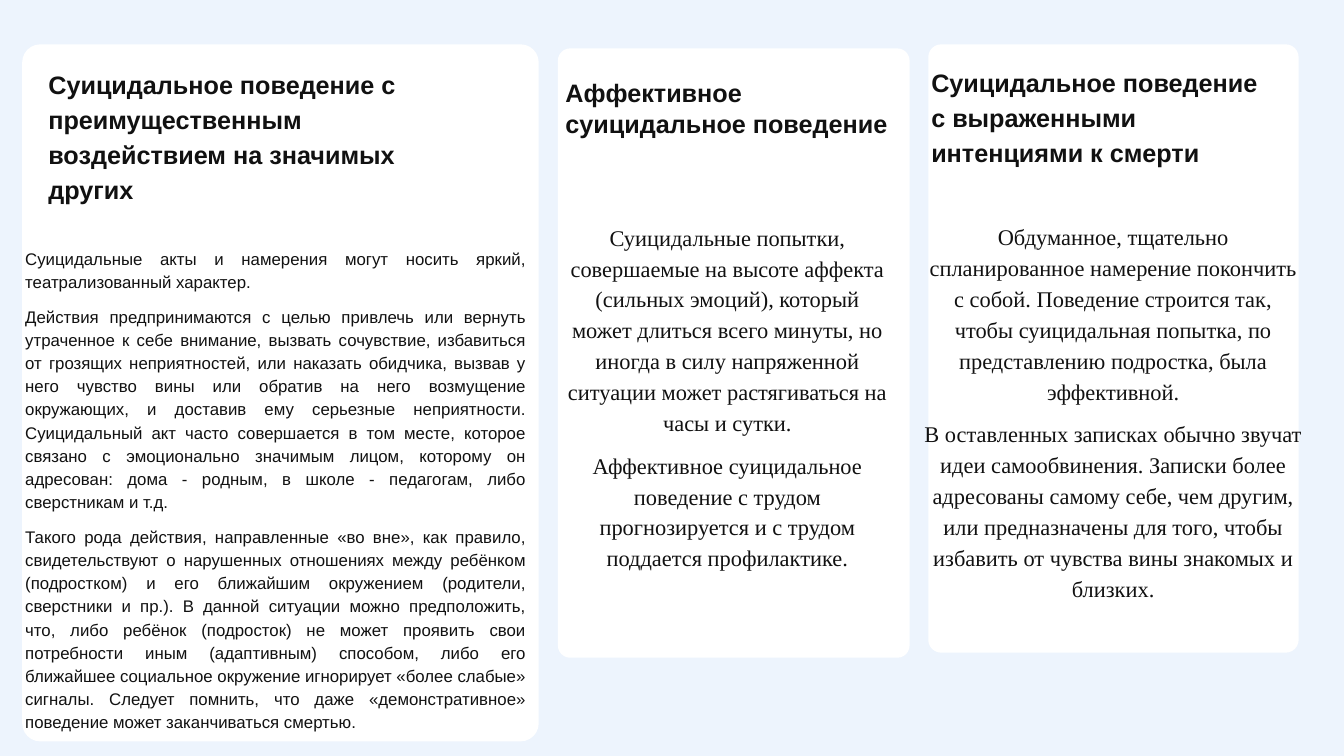
import pptx
import pptx.dml.color
import pptx.enum.shapes
import pptx.enum.text
import pptx.util
from pptx.util import Inches

BACKGROUND = pptx.dml.color.RGBColor(0xED, 0xF4, 0xFD)
CARD_FILL = pptx.dml.color.RGBColor(0xFF, 0xFF, 0xFF)
INK = pptx.dml.color.RGBColor(0x11, 0x11, 0x11)

ALIGN = pptx.enum.text.PP_ALIGN
ANCHOR = pptx.enum.text.MSO_ANCHOR

# Boxes are (left, top, width, height) in inches; heading and body are relative to the card.
CARDS = [
    dict(
        box=(0.44, 0.88, 10.25, 13.83),
        heading="Суицидальное поведение с преимущественным воздействием на значимых других",
        heading_box=(0.46, 0.37, 8.64, 2.84),
        heading_format={},
        body=[
            "Суицидальные акты и намерения могут носить яркий, театрализованный характер.",
            "Действия предпринимаются с целью привлечь или вернуть утраченное к себе внимание, "
            "вызвать сочувствие, избавиться от грозящих неприятностей, или наказать обидчика, "
            "вызвав у него чувство вины или обратив на него возмущение окружающих, и доставив "
            "ему серьезные неприятности. Суицидальный акт часто совершается в том месте, которое "
            "связано с эмоционально значимым лицом, которому он адресован: дома - родным, "
            "в школе - педагогам, либо сверстникам и т.д.",
            "Такого рода действия, направленные «во вне», как правило, свидетельствуют о "
            "нарушенных отношениях между ребёнком (подростком) и его ближайшим окружением "
            "(родители, сверстники и пр.). В данной ситуации можно предположить, что, либо "
            "ребёнок (подросток) не может проявить свои потребности иным (адаптивным) способом, "
            "либо его ближайшее социальное окружение игнорирует «более слабые» сигналы. Следует "
            "помнить, что даже «демонстративное» поведение может заканчиваться смертью.",
        ],
        body_box=(0, 3.93, 10.05, 9.9),
        body_format=dict(size=24, align=ALIGN.JUSTIFY),
    ),
    dict(
        box=(11.07, 0.96, 6.98, 12.09),
        heading="Аффективное суицидальное поведение",
        heading_box=(0.09, 0.52, 6.55, 2.33),
        heading_format=dict(anchor=ANCHOR.TOP, line_spacing=1.0, before=0, after=0),
        body=[
            "Суицидальные попытки, совершаемые на высоте аффекта (сильных эмоций), который может "
            "длиться всего минуты, но иногда в силу напряженной ситуации может растягиваться на "
            "часы и сутки.",
            "Аффективное суицидальное поведение с трудом прогнозируется и с трудом поддается "
            "профилактике.",
        ],
        body_box=(0.09, 3.34, 6.55, 7.12),
        body_format=dict(size=32, font="Times New Roman", align=ALIGN.CENTER),
    ),
    dict(
        box=(18.42, 0.88, 7.35, 12.07),
        heading="Суицидальное поведение с выраженными интенциями к смерти",
        heading_box=(0, 0.34, 6.88, 2.14),
        heading_format={},
        body=[
            "Обдуманное, тщательно спланированное намерение покончить с собой. Поведение строится "
            "так, чтобы суицидальная попытка, по представлению подростка, была эффективной.",
            "В оставленных записках обычно звучат идеи самообвинения. Записки более адресованы "
            "самому себе, чем другим, или предназначены для того, чтобы избавить от чувства вины "
            "знакомых и близких.",
        ],
        body_box=(-0.14, 3.41, 7.62, 7.74),
        body_format=dict(size=32, font="Times New Roman", align=ALIGN.CENTER),
    ),
]


def add_text(slide, box, paragraphs, *, size, font="Arial", bold=False, align=ALIGN.LEFT,
             anchor=ANCHOR.TOP, line_spacing=1.15, before=7.5, after=9):
    frame = slide.shapes.add_textbox(*map(Inches, box)).text_frame
    frame.word_wrap = True
    frame.vertical_anchor = anchor
    frame.margin_left = frame.margin_right = Inches(0.06)
    frame.margin_top = frame.margin_bottom = Inches(0.06)
    for index, text in enumerate(paragraphs):
        paragraph = frame.add_paragraph() if index else frame.paragraphs[0]
        paragraph.alignment = align
        paragraph.line_spacing = line_spacing
        paragraph.space_before = pptx.util.Pt(before)
        paragraph.space_after = pptx.util.Pt(after)
        run = paragraph.add_run()
        run.text = text
        run.font.name = font
        run.font.size = pptx.util.Pt(size)
        run.font.bold = bold
        run.font.color.rgb = INK


def add_card(slide, box, heading, heading_box, heading_format, body, body_box, body_format):
    """Draw a rounded panel with its heading and body placed relative to the panel's corner."""
    left, top, _, _ = box

    def inside(part):
        x, y, width, height = part
        return left + x, top + y, width, height

    panel = slide.shapes.add_shape(
        pptx.enum.shapes.MSO_SHAPE.ROUNDED_RECTANGLE, *map(Inches, box))
    panel.adjustments[0] = 0.035
    panel.shadow.inherit = False
    panel.fill.solid()
    panel.fill.fore_color.rgb = CARD_FILL
    panel.line.fill.background()

    heading_style = dict(size=36, bold=True, anchor=ANCHOR.MIDDLE) | heading_format
    add_text(slide, inside(heading_box), [heading], **heading_style)
    add_text(slide, inside(body_box), body, **body_format)


def main():
    deck = pptx.Presentation()
    deck.slide_width = Inches(26.67)
    deck.slide_height = Inches(15)
    blank_layout = deck.slide_layouts[6]
    slide = deck.slides.add_slide(blank_layout)
    slide.background.fill.solid()
    slide.background.fill.fore_color.rgb = BACKGROUND
    for card in CARDS:
        add_card(slide, **card)
    deck.save("out.pptx")


if __name__ == "__main__":
    main()
